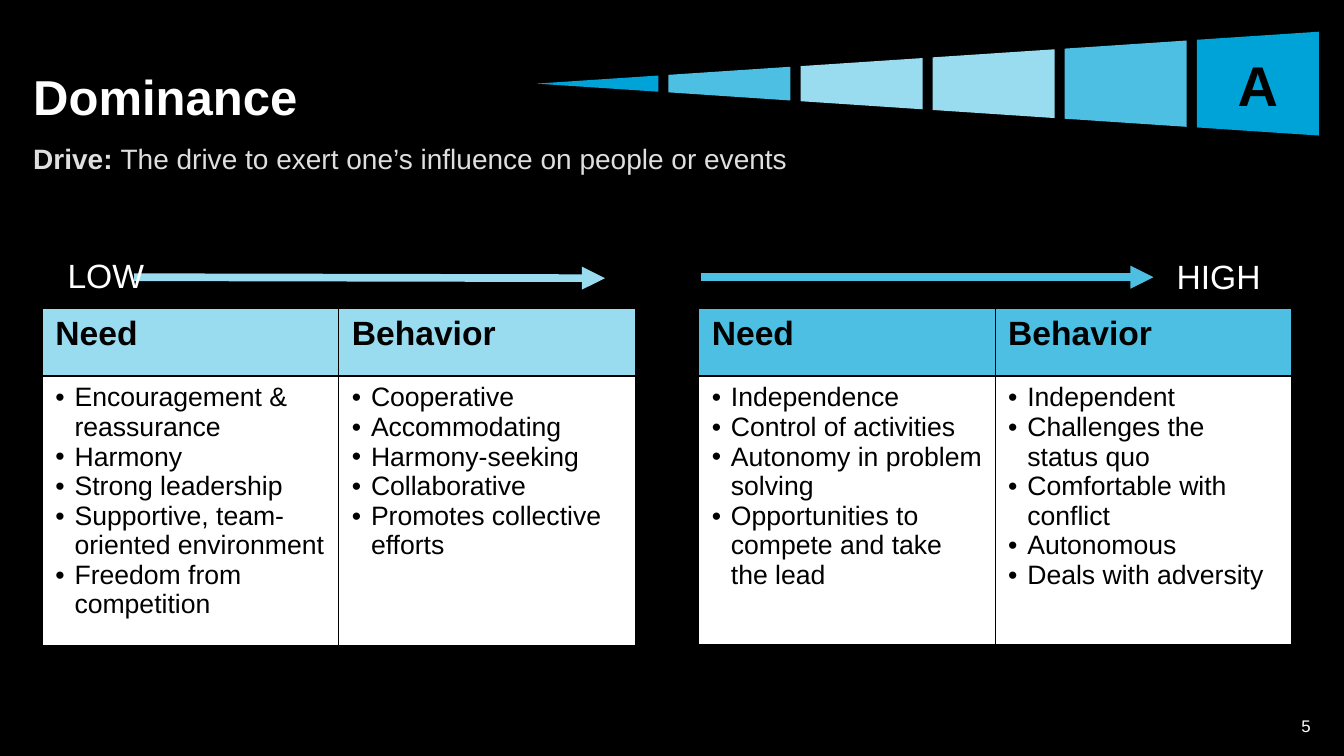
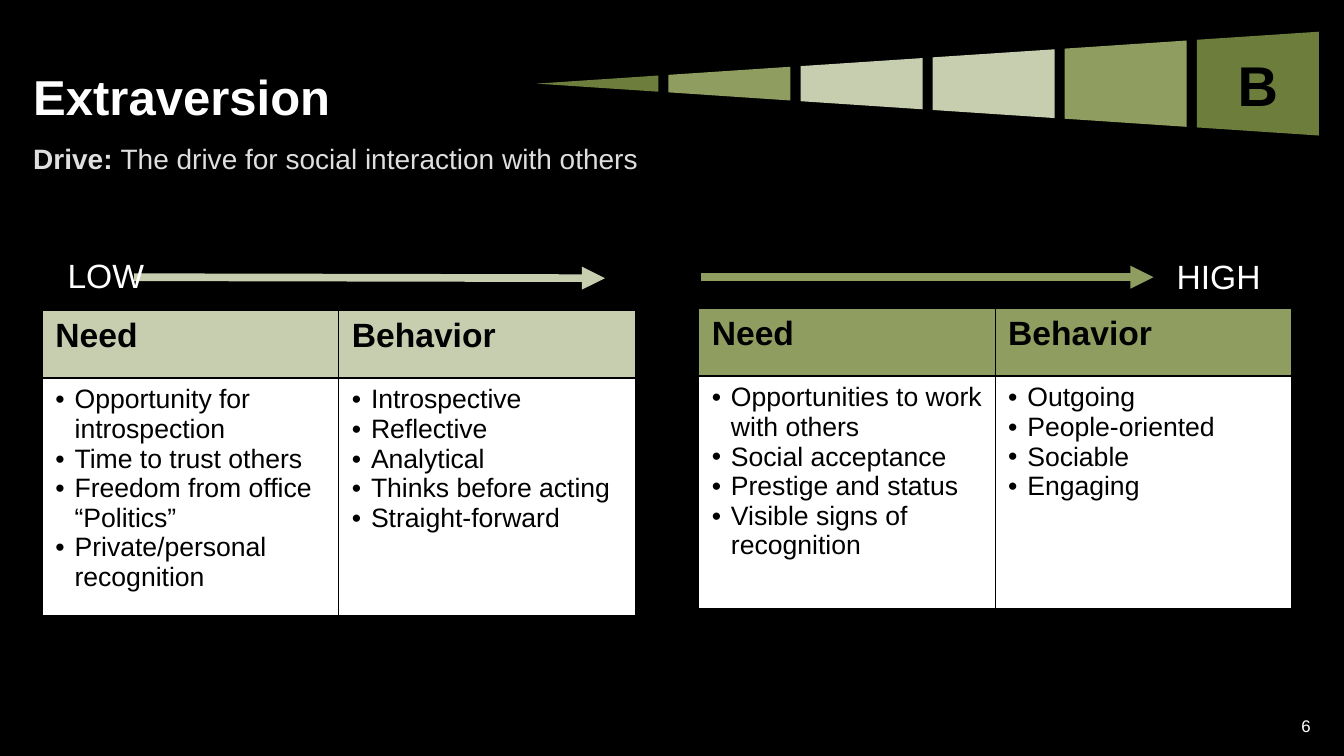
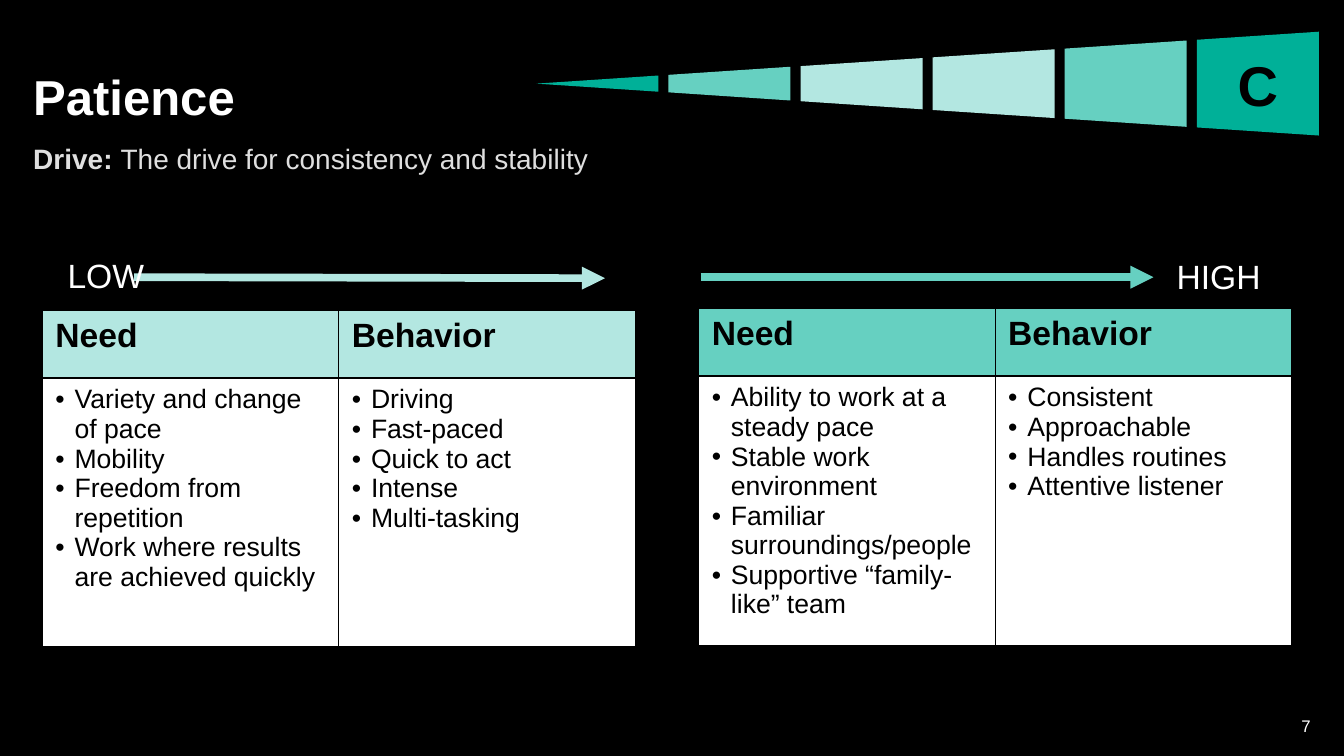
"""Build three slides on behavioural drives, each contrasting low and high scores."""
from dataclasses import dataclass

from lxml.etree import SubElement
from pptx import Presentation
from pptx.dml.color import RGBColor
from pptx.enum.shapes import MSO_CONNECTOR
from pptx.enum.text import MSO_ANCHOR, PP_ALIGN
from pptx.oxml.ns import qn
from pptx.presentation import Presentation as Deck
from pptx.slide import Slide
from pptx.table import _Cell as Cell
from pptx.text.text import Font, TextFrame
from pptx.util import Inches, Pt


@dataclass(frozen=True)
class Theme:
    font: str = "Arial"
    black: str = "000000"
    white: str = "FFFFFF"
    muted: str = "DFDFDF"
    title: int = 35
    drive: int = 20
    heading: int = 24
    bullet: int = 19
    number: int = 12
    letter: int = 40


@dataclass(frozen=True)
class Palette:
    dark: str
    middle: str
    light: str


@dataclass(frozen=True)
class Panel:
    needs: tuple[str, ...]
    behaviors: tuple[str, ...]
    top: float = 3.06
    body_height: float = 2.67


@dataclass(frozen=True)
class Factor:
    letter: str
    title: str
    drive: str
    palette: Palette
    low: Panel
    high: Panel


THEME = Theme()
FIRST_NUMBER = 5
LEFT_MARGIN, TEXT_WIDTH = 0.33, 12.67
LOW_LEFT, HIGH_LEFT = 0.42, 6.93
COLUMN_WIDTH, HEADER_HEIGHT = 2.94, 0.67
WEDGE_LEFT, WEDGE_MIDDLE = 5.32, 0.83
SEGMENT_WIDTH, SEGMENT_PITCH = 1.21, 1.31
WEDGE_SLOPE = 0.515 / (5 * SEGMENT_PITCH + SEGMENT_WIDTH)

FACTORS = (
    Factor(
        "A", "Dominance", "The drive to exert one’s influence on people or events",
        Palette("00A3D7", "4CBFE3", "99DBEF"),
        low=Panel(
            ("Encouragement & reassurance", "Harmony", "Strong leadership",
             "Supportive, team-oriented environment", "Freedom from competition"),
            ("Cooperative", "Accommodating", "Harmony-seeking", "Collaborative",
             "Promotes collective efforts"),
        ),
        high=Panel(
            ("Independence", "Control of activities", "Autonomy in problem solving",
             "Opportunities to compete and take the lead"),
            ("Independent", "Challenges the status quo", "Comfortable with conflict",
             "Autonomous", "Deals with adversity"),
        ),
    ),
    Factor(
        "B", "Extraversion", "The drive for social interaction with others",
        Palette("6D7D3C", "909D61", "C7CEB0"),
        low=Panel(
            ("Opportunity for introspection", "Time to trust others",
             "Freedom from office “Politics”", "Private/personal recognition"),
            ("Introspective", "Reflective", "Analytical", "Thinks before acting",
             "Straight-forward"),
            top=3.08, body_height=2.35,
        ),
        high=Panel(
            ("Opportunities to work with others", "Social acceptance",
             "Prestige and status", "Visible signs of recognition"),
            ("Outgoing", "People-oriented", "Sociable", "Engaging"),
            body_height=2.31,
        ),
    ),
    Factor(
        "C", "Patience", "The drive for consistency and stability",
        Palette("00B098", "66D0C1", "B3E7E1"),
        low=Panel(
            ("Variety and change of pace", "Mobility", "Freedom from repetition",
             "Work where results are achieved quickly"),
            ("Driving", "Fast-paced", "Quick to act", "Intense", "Multi-tasking"),
            top=3.08,
        ),
        high=Panel(
            ("Ability to work at a steady pace", "Stable work environment",
             "Familiar surroundings/people", "Supportive “family-like” team"),
            ("Consistent", "Approachable", "Handles routines", "Attentive listener"),
        ),
    ),
)


def style_font(font: Font, size: int, color: str, bold: bool = False) -> None:
    font.name = THEME.font
    font.size = Pt(size)
    font.bold = bold
    font.color.rgb = RGBColor.from_string(color)


def add_text_frame(page: Slide, left: float, top: float, width: float, height: float,
                   anchor: MSO_ANCHOR = MSO_ANCHOR.TOP) -> TextFrame:
    box = page.shapes.add_textbox(Inches(left), Inches(top), Inches(width), Inches(height))
    frame = box.text_frame
    frame.word_wrap = True
    frame.vertical_anchor = anchor
    frame.margin_left = frame.margin_right = frame.margin_top = frame.margin_bottom = 0
    return frame


def add_heading(page: Slide, factor: Factor) -> None:
    title = add_text_frame(page, LEFT_MARGIN, 0.33, TEXT_WIDTH, 0.91, MSO_ANCHOR.BOTTOM)
    para = title.paragraphs[0]
    para.text = factor.title
    para.line_spacing = Pt(32)
    style_font(para.font, THEME.title, THEME.white, bold=True)

    para = add_text_frame(page, LEFT_MARGIN, 1.4, TEXT_WIDTH, 0.4).paragraphs[0]
    para.space_before, para.space_after = Pt(10), Pt(3)
    style_font(para.font, THEME.drive, THEME.muted)
    for text, bold in (("Drive: ", True), (factor.drive, False)):
        span = para.add_run()
        span.text = text
        style_font(span.font, THEME.drive, THEME.muted, bold)


def add_page_number(page: Slide, number: int) -> None:
    para = add_text_frame(page, 12.25, 7.12, 0.75, 0.18, MSO_ANCHOR.BOTTOM).paragraphs[0]
    para.text = str(number)
    para.alignment = PP_ALIGN.RIGHT
    style_font(para.font, THEME.number, THEME.white)


def add_scale_label(page: Slide, text: str, left: float, top: float) -> None:
    para = add_text_frame(page, left, top, 1, 0.46).paragraphs[0]
    para.text = text
    style_font(para.font, THEME.heading, THEME.white)


def add_arrow(page: Slide, start: tuple[float, float], end: tuple[float, float],
              color: str) -> None:
    arrow = page.shapes.add_connector(
        MSO_CONNECTOR.STRAIGHT, *(Inches(value) for value in start + end))
    arrow.line.width = Pt(5.5)
    arrow.line.color.rgb = RGBColor.from_string(color)
    SubElement(arrow.line._get_or_add_ln(), qn("a:tailEnd"), type="triangle")
    SubElement(arrow._element.spPr, qn("a:effectLst"))


def add_wedge(page: Slide, factor: Factor) -> None:
    palette = factor.palette
    shades = (palette.dark, palette.middle, palette.light)
    segments = page.shapes.add_group_shape().shapes
    for index, color in enumerate(shades + shades[::-1]):
        start = index * SEGMENT_PITCH
        end = start + SEGMENT_WIDTH
        corners = [
            (Inches(WEDGE_LEFT + offset), Inches(WEDGE_MIDDLE + side * WEDGE_SLOPE * offset))
            for offset, side in ((start, 1), (end, 1), (end, -1), (start, -1))
        ]
        outline = segments.build_freeform(*corners[0])
        outline.add_line_segments(corners[1:], close=True)
        segment = outline.convert_to_shape()
        segment.shadow.inherit = False
        segment.fill.solid()
        segment.fill.fore_color.rgb = RGBColor.from_string(color)
        segment.line.fill.background()
    segment.text_frame.vertical_anchor = MSO_ANCHOR.MIDDLE
    para = segment.text_frame.paragraphs[0]
    para.text = factor.letter
    para.alignment = PP_ALIGN.CENTER
    style_font(para.font, THEME.letter, THEME.black, bold=True)


def style_cell(cell: Cell, color: str) -> None:
    cell.margin_left, cell.margin_right = Inches(0.13), Inches(0.11)
    cell.margin_top = cell.margin_bottom = Inches(0.07)
    properties = cell._tc.get_or_add_tcPr()
    for edge in ("lnL", "lnR", "lnT", "lnB"):
        border = SubElement(properties, qn(f"a:{edge}"), w=str(Pt(1)))
        SubElement(SubElement(border, qn("a:solidFill")), qn("a:srgbClr"), val=THEME.black)
    cell.fill.solid()
    cell.fill.fore_color.rgb = RGBColor.from_string(color)


def fill_bullets(frame: TextFrame, items: tuple[str, ...]) -> None:
    for index, item in enumerate(items):
        para = frame.add_paragraph() if index else frame.paragraphs[0]
        properties = para._p.get_or_add_pPr()
        properties.set("marL", str(Inches(0.19)))
        properties.set("indent", str(-Inches(0.19)))
        SubElement(properties, qn("a:buFont"), typeface=THEME.font)
        SubElement(properties, qn("a:buChar"), char="•")
        para.text = item
        style_font(para.font, THEME.bullet, THEME.black)


def add_panel(page: Slide, panel: Panel, left: float, color: str) -> None:
    table = page.shapes.add_table(
        2, 2, Inches(left), Inches(panel.top), Inches(2 * COLUMN_WIDTH),
        Inches(HEADER_HEIGHT + panel.body_height)).table
    table.first_row = table.horz_banding = False
    table.rows[0].height = Inches(HEADER_HEIGHT)
    table.rows[1].height = Inches(panel.body_height)
    columns = (("Need", panel.needs), ("Behavior", panel.behaviors))
    for index, (heading, items) in enumerate(columns):
        table.columns[index].width = Inches(COLUMN_WIDTH)
        header, body = table.cell(0, index), table.cell(1, index)
        style_cell(header, color)
        style_cell(body, THEME.white)
        para = header.text_frame.paragraphs[0]
        para.text = heading
        style_font(para.font, THEME.heading, THEME.black, bold=True)
        fill_bullets(body.text_frame, items)


def add_factor_page(deck: Deck, factor: Factor, number: int) -> None:
    page = deck.slides.add_slide(deck.slide_layouts[6])
    palette = factor.palette
    add_heading(page, factor)
    add_page_number(page, number)
    add_panel(page, factor.high, HIGH_LEFT, palette.middle)
    add_arrow(page, (6.95, 2.75), (11.44, 2.75), palette.middle)
    add_arrow(page, (1.33, 2.75), (6, 2.76), palette.light)
    add_scale_label(page, "HIGH", 11.67, 2.54)
    add_scale_label(page, "LOW", 0.67, 2.53)
    add_panel(page, factor.low, LOW_LEFT, palette.light)
    add_wedge(page, factor)


def main() -> None:
    deck = Presentation()
    deck.slide_width, deck.slide_height = Inches(13.33), Inches(7.5)
    background = deck.slide_master.background.fill
    background.solid()
    background.fore_color.rgb = RGBColor.from_string(THEME.black)
    for number, factor in enumerate(FACTORS, start=FIRST_NUMBER):
        add_factor_page(deck, factor, number)
    deck.save("out.pptx")


if __name__ == "__main__":
    main()
